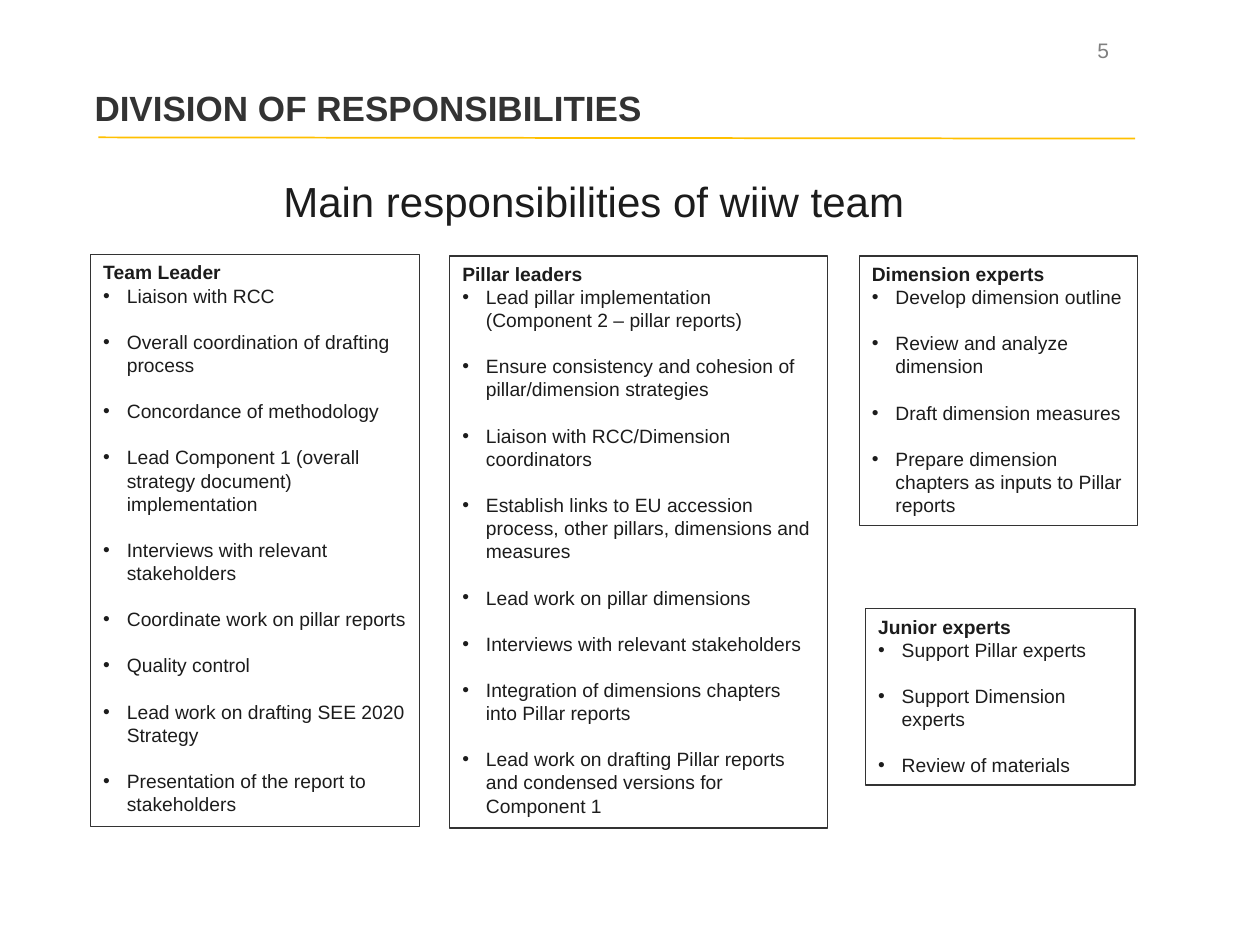
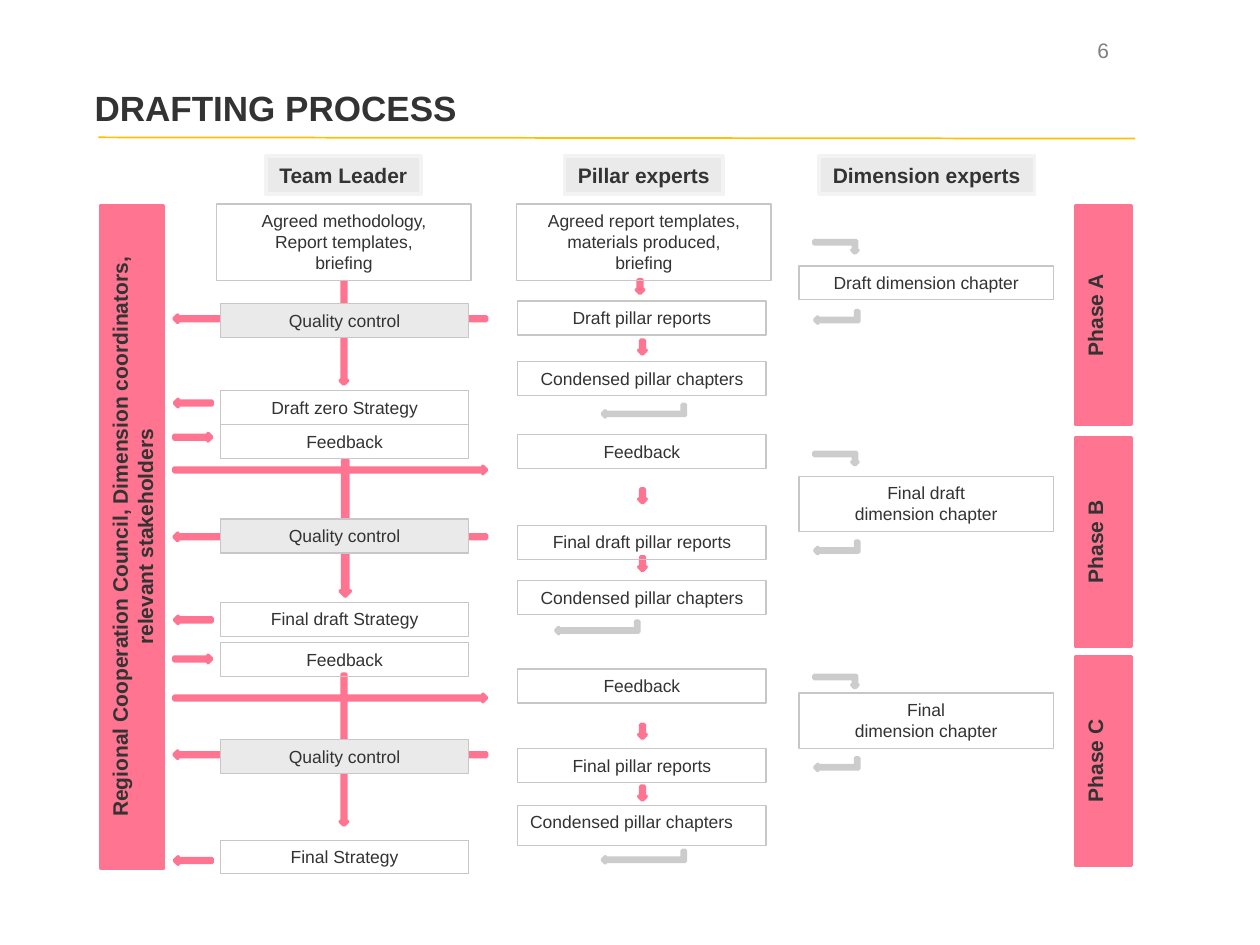
from lxml.etree import SubElement
from pptx import Presentation
from pptx.dml.color import RGBColor
from pptx.enum.shapes import MSO_CONNECTOR, MSO_SHAPE
from pptx.enum.text import MSO_ANCHOR, MSO_AUTO_SIZE, PP_ALIGN
from pptx.oxml.ns import qn
from pptx.util import Pt

INK = RGBColor(0x33, 0x33, 0x33)
BLACK = RGBColor(0x1C, 0x1C, 0x1C)
GRAY = RGBColor(0x80, 0x80, 0x80)
GOLD = RGBColor(0xFF, 0xC0, 0x00)
PINK = RGBColor(0xFF, 0x75, 0x91)
SILVER = RGBColor(0xCC, 0xCC, 0xCC)
EDGE = RGBColor(0xC7, 0xC7, 0xC7)
PALE = RGBColor(0xEA, 0xEA, 0xEA)
FROST = RGBColor(0xF3, 0xF3, 0xF3)
WHITE = RGBColor(0xFF, 0xFF, 0xFF)

FACE = "Arial"
FIRST = 5
INDENT = 13.5

ROLES = [
    ("Team Leader", (51.8, 145.4, 187.9, 326.9), [
        "Liaison with RCC",
        "Overall coordination of drafting process",
        "Concordance of methodology",
        "Lead Component 1 (overall strategy document) implementation",
        "Interviews with relevant stakeholders",
        "Coordinate work on pillar reports",
        "Quality control",
        "Lead work on drafting SEE 2020 Strategy",
        "Presentation of the report to stakeholders",
    ]),
    ("Pillar leaders", (257, 146.2, 216, 326.9), [
        "Lead pillar implementation (Component 2 – pillar reports)",
        "Ensure consistency and cohesion of pillar/dimension strategies",
        "Liaison with RCC/Dimension coordinators",
        "Establish links to EU accession process, other pillars, "
        "dimensions and measures",
        "Lead work on pillar dimensions",
        "Interviews with relevant stakeholders",
        "Integration of dimensions chapters into Pillar reports",
        "Lead work on drafting Pillar reports and condensed versions "
        "for Component 1",
    ]),
    ("Dimension experts", (491, 146.2, 159.1, 154), [
        "Develop dimension outline",
        "Review and analyze dimension",
        "Draft dimension measures",
        "Prepare dimension chapters as inputs to Pillar reports",
    ]),
    ("Junior experts", (494.6, 347.8, 154, 100.8), [
        "Support Pillar experts",
        "Support Dimension experts",
        "Review of materials",
    ]),
]

HEADS = [("Team Leader", 151.9, 88.6), ("Pillar experts", 322.6, 90.7),
         ("Dimension experts", 468, 123.1)]

STARTS = [
    ("Agreed methodology,\nReport templates,\nbriefing", 123.8, WHITE),
    ("Agreed report templates, materials produced,\nbriefing", 295.2, None),
]

STEPS = [
    (126, 141.8, [
        ("Draft zero Strategy", 223.2, 19.4),
        ("Feedback", 242.6, 19.4),
        ("Final draft Strategy", 344.2, 19.4),
        ("Feedback", 367.2, 19.4),
        ("Final Strategy", 480.2, 18.9),
        ("Quality control", 173.5, 19.4),
        ("Quality control", 296.6, 19.4),
        ("Quality control", 422.6, 19.4),
    ]),
    (295.9, 141.8, [
        ("Draft pillar reports", 172.1, 19.4),
        ("Condensed pillar chapters", 206.6, 19.4),
        ("Feedback", 248.4, 19.4),
        ("Final draft pillar reports", 300.2, 19.4),
        ("Condensed pillar chapters", 331.9, 19.4),
        ("Feedback", 382.3, 19.4),
        ("Final pillar reports", 427.7, 19.4),
        ("Condensed pillar chapters", 460.1, 23),
    ]),
    (456.5, 145.4, [
        ("Draft dimension chapter", 152, 19.4),
        ("Final draft\ndimension chapter", 272.2, 31.7),
        ("Final\ndimension chapter", 396, 31.7),
    ]),
]

DOWN, LEFT, RIGHT, BENT = (MSO_SHAPE.DOWN_ARROW, MSO_SHAPE.LEFT_ARROW,
                           MSO_SHAPE.RIGHT_ARROW, MSO_SHAPE.BENT_UP_ARROW)
FLOWS = [
    (DOWN, 4.3, 59.8, [(194.4, 159.8)]),
    (DOWN, 5.8, 77.8, [(194.4, 262.8)]),
    (DOWN, 4.3, 86.4, [(194.4, 385.2)]),
    (DOWN, 4.3, 7.9, [(363.6, 159.8)]
     + [(365, y) for y in (194.4, 279.4, 318.2, 414, 449.3)]),
    (LEFT, 21.6, 4.3, [(99.7, y) for y in (228.2, 352.1, 489.6)]),
    (RIGHT, 21.6, 4.3, [(99.4, y) for y in (247.7, 374.4)]),
    (LEFT, 178.6, 4.3, [(99.4, y) for y in (180, 304.6, 429.1)]),
    (RIGHT, 178.6, 4.3, [(99.4, y) for y in (266.4, 396.7)]),
]
BENDS = [
    (180, 25.2, 7.2, [(465.1, y) for y in (137.5, 258.5, 385.9)]),
    (270, 7.2, 25.2, [(474.5, y) for y in (168.5, 300.2, 424.1)]),
    (270, 7.2, 47.5, [(364.3, 211), (337.7, 334.8), (364.3, 465.8)]),
]
SIDES = [
    ("Regional Cooperation Council, Dimension coordinators,\n"
     "relevant stakeholders", 57.6, 117.4, 36, 378.7),
    ("Phase A", 614.9, 117.4, 31.7, 125.3),
    ("Phase B", 614.9, 249.9, 31.7, 119.5),
    ("Phase C", 614.9, 375.1, 31.7, 119.5),
]


def apply(obj, vals):
    for key, val in vals.items():
        setattr(obj, key, val)


def place(obj, box):
    apply(obj, dict(zip(("left", "top", "width", "height"), map(Pt, box))))


def write(obj, text, size, color, bold=False, align=PP_ALIGN.LEFT,
          wrap=True, lead=None, anchor=MSO_ANCHOR.TOP):
    frame = obj.text_frame
    frame.text = text
    apply(frame, {"word_wrap": wrap, "auto_size": MSO_AUTO_SIZE.NONE,
                  "vertical_anchor": anchor})
    for par in frame.paragraphs:
        apply(par, {"alignment": align, "space_before": Pt(0),
                    "line_spacing": lead or Pt(size * 1.2)})
        for run in par.runs:
            apply(run.font, {"name": FACE, "size": Pt(size), "bold": bold})
            run.font.color.rgb = color
    return frame


def paint(obj, fill, line, width):
    if fill is None:
        obj.fill.background()
    else:
        obj.fill.solid()
        obj.fill.fore_color.rgb = fill
    obj.line.color.rgb = line
    obj.line.width = Pt(width)


def shape(slide, kind, box, fill, line, width=2):
    obj = slide.shapes.add_shape(kind, *map(Pt, box))
    obj.shadow.inherit = False
    paint(obj, fill, line, width)
    return obj


def label(slide, text, box, fill=None, align=PP_ALIGN.CENTER):
    obj = shape(slide, MSO_SHAPE.RECTANGLE, box, fill, EDGE, 0.75)
    write(obj, text, 10, INK, align=align)


def note(slide, text, box, size, color, wrap=True):
    obj = slide.shapes.add_textbox(*map(Pt, box))
    write(obj, text, size, color, wrap=wrap)


def start(deck, layout, title):
    slide = deck.slides.add_slide(deck.slide_layouts[layout])
    head = slide.shapes.title
    place(head, (46.8, 25.2, 612, 67.7))
    write(head, title, 20, INK, True, lead=1.2, anchor=MSO_ANCHOR.MIDDLE)
    number = str(FIRST + len(deck.slides) - 1)
    note(slide, number, (620, 18, 68.4, 21.6), 12, GRAY)
    rule = slide.shapes.add_connector(
        MSO_CONNECTOR.STRAIGHT, *map(Pt, (56.2, 78.5, 648.7, 79.2)))
    rule.line.color.rgb = GOLD
    rule.line.width = Pt(1)
    SubElement(rule.element.spPr, qn("a:effectLst"))
    return slide


def bullet(par, on):
    props = par._p.get_or_add_pPr()
    step = Pt(INDENT) if on else 0
    props.set("marL", str(step))
    props.set("indent", str(-step))
    if on:
        SubElement(props, qn("a:buChar")).set("char", "•")
    else:
        SubElement(props, qn("a:buNone"))


def roles(deck):
    slide = start(deck, 4, "DIVISION OF RESPONSIBILITIES")
    note(slide, "Main responsibilities of wiiw team",
         (154.8, 96.5, 373, 36), 24, BLACK, False)
    for hold, (name, box, tasks) in zip(list(slide.placeholders)[1:], ROLES):
        place(hold, box)
        paint(hold, None, INK, 0.75)
        frame = write(hold, "\n".join([name] + tasks), 11, BLACK)
        for row, par in enumerate(frame.paragraphs):
            bullet(par, row > 0)
            par.runs[0].font.bold = row == 0
            if row > 1:
                par.space_before = Pt(13.2)


def process(deck):
    slide = start(deck, 5, "DRAFTING PROCESS")
    for kind, wide, high, spots in FLOWS:
        for x, y in spots:
            shape(slide, kind, (x, y, wide, high), PINK, PINK)
    for turn, wide, high, spots in BENDS:
        for x, y in spots:
            bend = shape(slide, BENT, (x, y, wide, high), SILVER, SILVER)
            bend.rotation = turn
            bend.element.spPr.find(qn("a:xfrm")).set("flipH", "1")
    for text, x, wide in HEADS:
        head = shape(slide, MSO_SHAPE.RECTANGLE, (x, 89.3, wide, 21.6),
                     PALE, FROST)
        write(head, text, 12, INK, True, PP_ALIGN.CENTER, False)
    for text, x, fill in STARTS:
        label(slide, text, (x, 116.6, 145.4, 43.9), fill)
    for x, wide, rows in STEPS:
        for text, y, high in rows:
            fill = PALE if text == "Quality control" else None
            align = PP_ALIGN.LEFT if high == 23 else PP_ALIGN.CENTER
            label(slide, text, (x, y, wide, high), fill, align)
    for text, x, y, wide, high in SIDES:
        shift = (high - wide) / 2
        side = shape(slide, MSO_SHAPE.RECTANGLE,
                     (x - shift, y + shift, high, wide), PINK, PINK)
        side.rotation = 270
        frame = write(side, text, 12, INK, True, PP_ALIGN.CENTER)
        apply(frame, {"margin_" + edge: Pt(3.6)
                      for edge in ("left", "top", "right", "bottom")})


def main():
    deck = Presentation()
    apply(deck, {"slide_width": Pt(720), "slide_height": Pt(540)})
    roles(deck)
    process(deck)
    deck.save("out.pptx")


if __name__ == "__main__":
    main()
